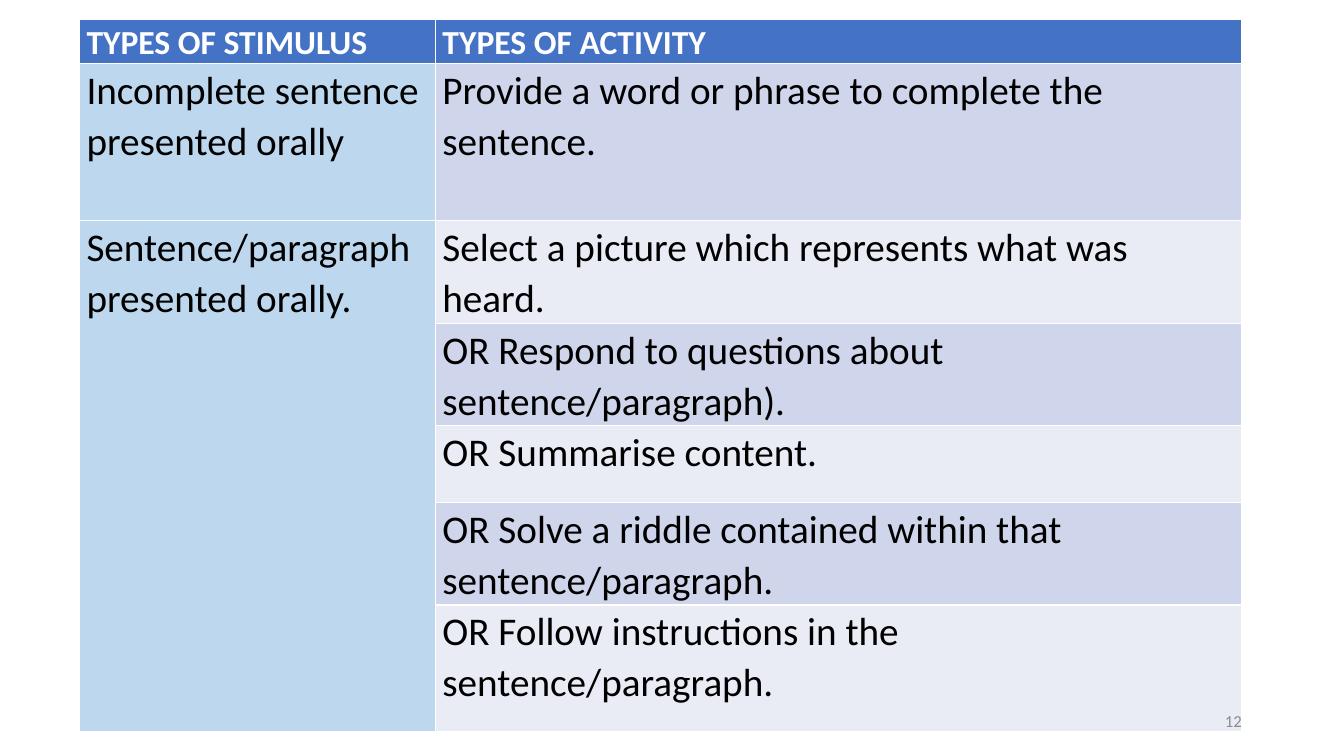
"""Build a slide with a table of listening stimuli and matching activities."""
from pptx import Presentation
from pptx.dml.color import RGBColor
from pptx.enum.text import MSO_ANCHOR, PP_ALIGN
from pptx.util import Cm, Pt

MIDDLE, RIGHT = MSO_ANCHOR.MIDDLE, PP_ALIGN.RIGHT

ROWS = [
    ("TYPES OF STIMULUS", "TYPES OF ACTIVITY"),
    ("Incomplete sentence presented orally",
     "Provide a word or phrase to complete the sentence."),
    ("Sentence/paragraph presented orally.",
     "Select a picture which represents what was heard."),
    ("", "OR Respond to questions about sentence/paragraph)."),
    ("", "OR Summarise content."),
    ("", "OR Solve a riddle contained within that sentence/paragraph."),
    ("", "OR Follow instructions in the sentence/paragraph."),
]
PAGE_NUMBER = "12"
COL_WIDTHS = [8.97, 20.32]
ROW_HEIGHTS = [1.07, 3.96, 1.93, 1.93, 1.93, 1.93, 3.18]
COLORS = {"header": "4472C4", "stimulus": "BDD7EE", "odd": "CFD5EA",
          "even": "E9EBF5", "white": "FFFFFF", "black": "000000",
          "gray": "8C8C8C"}
HEADER_FONT = {"name": "Calibri", "size": Pt(24), "bold": True}
BODY_FONT = {"name": "Calibri", "size": Pt(28), "bold": False}
NUMBER_FONT = {"name": "Calibri", "size": Pt(12)}
PARAGRAPH = {"line_spacing": 1.07, "space_after": Pt(8)}
MARGINS = {"margin_left": Cm(0.17), "margin_right": Cm(0.17),
           "margin_top": 0, "margin_bottom": 0}


def color(name):
    return RGBColor.from_string(COLORS[name])


def apply(obj, values):
    for key, value in values.items():
        setattr(obj, key, value)


def write(p, text, font, font_color):
    r = p.add_run()
    r.text = text
    apply(r.font, font)
    r.font.color.rgb = color(font_color)


def fill_name(row, col):
    if row == 0:
        return "header"
    if col == 0:
        return "stimulus"
    return "odd" if row % 2 else "even"


def add_activity_table(s):
    table = s.shapes.add_table(
        len(ROWS), len(COL_WIDTHS), Cm(2.01), Cm(0.5),
        Cm(sum(COL_WIDTHS)), Cm(sum(ROW_HEIGHTS))).table
    for column, width in zip(table.columns, COL_WIDTHS):
        column.width = Cm(width)
    for row, height in zip(table.rows, ROW_HEIGHTS):
        row.height = Cm(height)
    table.cell(2, 0).merge(table.cell(len(ROWS) - 1, 0))
    for i, texts in enumerate(ROWS):
        font, font_color = (BODY_FONT, "black") if i else (HEADER_FONT, "white")
        for j, text in enumerate(texts):
            cell = table.cell(i, j)
            apply(cell, MARGINS)
            cell.fill.solid()
            cell.fill.fore_color.rgb = color(fill_name(i, j))
            if text:
                p = cell.text_frame.paragraphs[0]
                apply(p, PARAGRAPH)
                write(p, text, font, font_color)


def add_page_number(s):
    tf = s.shapes.add_textbox(Cm(23.93), Cm(17.65), Cm(7.62), Cm(1.01)).text_frame
    apply(tf, {"word_wrap": True, "vertical_anchor": MIDDLE})
    p = tf.paragraphs[0]
    p.alignment = RIGHT
    write(p, PAGE_NUMBER, NUMBER_FONT, "gray")


def main():
    prs = Presentation()
    prs.slide_width, prs.slide_height = Cm(33.87), Cm(19.05)
    s = prs.slides.add_slide(prs.slide_layouts[6])
    add_activity_table(s)
    add_page_number(s)
    prs.save("out.pptx")


if __name__ == "__main__":
    main()
